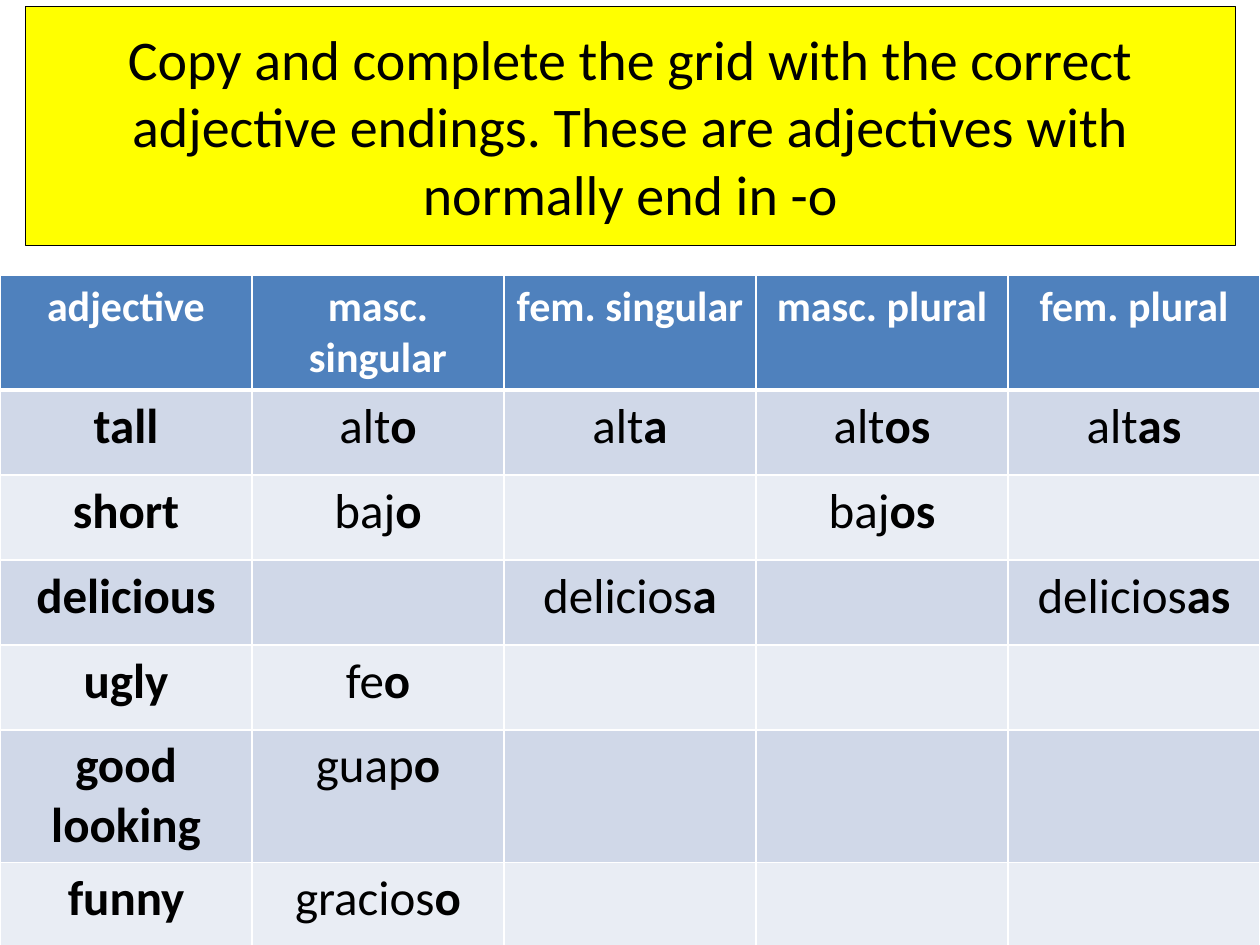
from dataclasses import dataclass

from lxml import etree
from pptx import Presentation
from pptx import util as u
from pptx.dml.color import RGBColor
from pptx.enum import text
from pptx.oxml import ns

SCALE = 914400 / 126
FONT = "Calibri"
BLACK = RGBColor(0, 0, 0)
WHITE = RGBColor(255, 255, 255)
YELLOW = RGBColor(255, 255, 0)
BLUE = RGBColor(0x4F, 0x81, 0xBD)
BANDS = (RGBColor(0xD0, 0xD8, 0xE8), RGBColor(0xE9, 0xED, 0xF4))

COLUMN = 252
HEADER = ("adjective", "masc. singular", "fem. singular", "masc. plural", "fem. plural")
ENDINGS = ("o", "a", "os", "as")


@dataclass(frozen=True)
class Word:
    english: str
    stem: str
    shown: tuple[str, ...]
    height: int = 85


WORDS = (
    Word("tall", "alt", ENDINGS),
    Word("short", "baj", ("o", "os")),
    Word("delicious", "delicios", ("a", "as")),
    Word("ugly", "fe", ("o",)),
    Word("good looking", "guap", ("o",), 130),
    Word("funny", "gracios", ("o",)),
)


def px(count: int) -> u.Emu:
    return u.Emu(round(count * SCALE))


def write(para, words: str, size: int, color: RGBColor, bold: bool = False) -> None:
    para.alignment = text.PP_ALIGN.CENTER
    run = para.add_run()
    run.text = words
    run.font.name = FONT
    run.font.size = u.Pt(size)
    run.font.bold = bold
    run.font.color.rgb = color


def style(cell, fill: RGBColor, top: int = 1, bottom: int = 1) -> None:
    props = cell._tc.get_or_add_tcPr()
    for side, width in (("L", 1), ("R", 1), ("T", top), ("B", bottom)):
        line = etree.SubElement(props, ns.qn(f"a:ln{side}"), w=str(u.Pt(width)))
        solid = etree.SubElement(line, ns.qn("a:solidFill"))
        etree.SubElement(solid, ns.qn("a:srgbClr"), val=str(WHITE))
    cell.fill.solid()
    cell.fill.fore_color.rgb = fill


def draw_title(slide) -> None:
    title = slide.shapes.title
    title.left, title.top, title.width, title.height = map(px, (25, 6, 1211, 239))
    shape = etree.SubElement(title._element.spPr, ns.qn("a:prstGeom"), prst="roundRect")
    etree.SubElement(shape, ns.qn("a:avLst"))
    title.fill.solid()
    title.fill.fore_color.rgb = YELLOW
    title.line.color.rgb = BLACK
    title.line.width = u.Pt(0.5)
    frame = title.text_frame
    frame.word_wrap = True
    frame.auto_size = text.MSO_AUTO_SIZE.NONE
    frame.vertical_anchor = text.MSO_ANCHOR.MIDDLE
    write(
        frame.paragraphs[0],
        "Copy and complete the grid with the correct adjective endings. "
        "These are adjectives with normally end in -o",
        32,
        BLACK,
    )


def draw_grid(slide, words: tuple[Word, ...]) -> None:
    heights = [113] + [word.height for word in words]
    count = len(HEADER)
    grid = slide.shapes.add_table(
        len(heights), count, px(0), px(275), px(COLUMN * count), px(sum(heights))
    ).table
    for column in grid.columns:
        column.width = px(COLUMN)
    for row, height in zip(grid.rows, heights):
        row.height = px(height)
    for cell, label in zip(grid.rows[0].cells, HEADER):
        style(cell, BLUE, bottom=3)
        write(cell.text_frame.paragraphs[0], label, 24, WHITE, True)
    for index, word in enumerate(words):
        first, *forms = grid.rows[index + 1].cells
        for cell in (first, *forms):
            style(cell, BANDS[index % 2], top=1 if index else 3)
        write(first.text_frame.paragraphs[0], word.english, 28, BLACK, True)
        for cell, ending in zip(forms, ENDINGS):
            if ending in word.shown:
                para = cell.text_frame.paragraphs[0]
                write(para, word.stem, 28, BLACK)
                write(para, ending, 28, BLACK, True)


def main() -> None:
    deck = Presentation()
    deck.slide_width, deck.slide_height = px(1260), px(945)
    slide = deck.slides.add_slide(deck.slide_layouts[5])
    draw_title(slide)
    draw_grid(slide, WORDS)
    deck.save("out.pptx")


if __name__ == "__main__":
    main()
